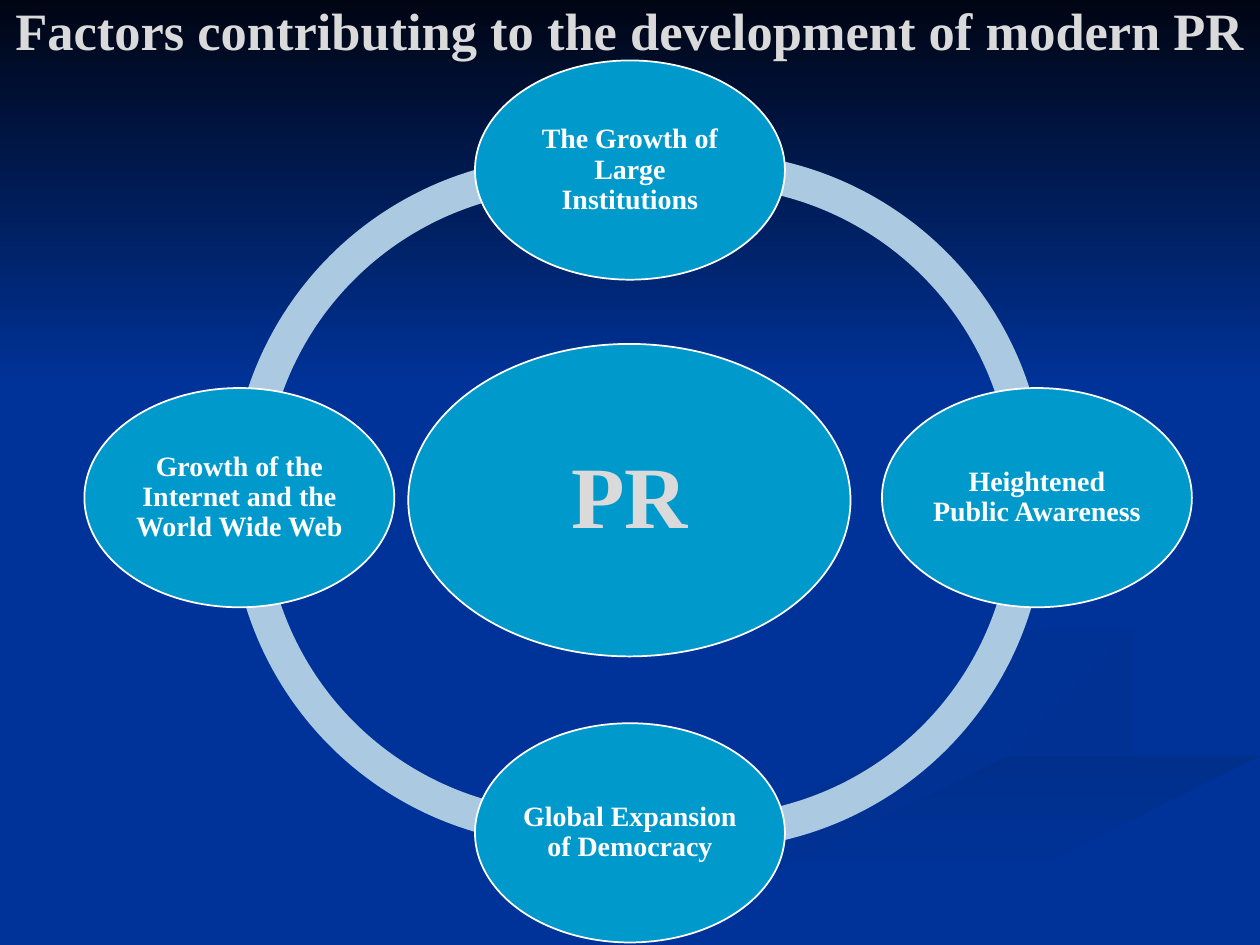
import pptx
import pptx.util
import pptx.dml.color
import pptx.enum.shapes
import pptx.enum.text

Inches = pptx.util.Inches
Pt = pptx.util.Pt
SHAPE = pptx.enum.shapes.MSO_SHAPE

FONT = "Times New Roman"
NAVY, BLUE, RING, WHITE, SILVER = "003399", "0099CC", "ABCAE2", "FFFFFF", "DADADA"

# Background swirls: first colour, last colour, clockwise angle, outline in inches
SWIRLS = [
    (NAVY, "003193", 0, [
        (7.81, 5.53), (6.82, 5.19), (5.75, 4.59), (6.02, 4.95), (7.41, 5.39),
        (7.86, 5.66), (7.39, 5.98), (4.99, 6.61), (3, 7.49), (3.61, 7.49),
        (5.64, 6.65), (7.56, 6.14), (8, 5.81)]),
    (NAVY, "003193", 45, [
        (9.43, 5.7), (9.05, 5.4), (7.58, 4.98), (7.24, 4.64), (7.55, 5.05),
        (8.8, 5.49), (9.18, 5.81), (8.94, 6.05), (9.32, 5.89)]),
    ("002F8C", NAVY, 90, [
        (5.03, 7.49), (5.71, 7.49), (6.95, 6.92), (8.21, 6.51), (9.98, 6.09),
        (9.98, 5.81), (7.64, 6.47), (6.3, 6.93)]),
    ("003091", NAVY, 45, [
        (7.81, 4.6), (8.26, 4.96), (8.05, 4.76), (8.59, 4.43), (9.98, 4.2),
        (9.98, 4.02), (8.35, 4.3)]),
]

# Ring quarters: left, top, start and end angle in degrees
RING_ARCS = [(1.83, 1.24, 180, 280), (1.83, 1.32, 80, 181),
             (2.91, 1.35, 358, 103), (2.91, 1.21, 257, 1)]

# Factors around the ring: left, top, label
FACTORS = [(3.77, 0.48, "The Growth of Large Institutions"),
           (7, 3.08, "Heightened Public Awareness"),
           (3.77, 5.74, "Global Expansion of Democracy"),
           (0.67, 3.08, "Growth of the Internet and the World Wide Web")]


def rgb(value):
    return pptx.dml.color.RGBColor.from_string(value)


def style(sp, color, line=None):
    sp.shadow.inherit = False
    sp.fill.solid()
    sp.fill.fore_color.rgb = rgb(color)
    if line:
        sp.line.color.rgb = rgb(line)
        sp.line.width = Pt(1)
    else:
        sp.line.fill.background()


def shade(sp, first, last, angle):
    style(sp, first)
    sp.fill.gradient()
    sp.fill.gradient_angle = -angle % 360  # python-pptx counts anticlockwise
    for stop, color, position in zip(sp.fill.gradient_stops, (first, last), (0, 1)):
        stop.color.rgb = rgb(color)
        stop.position = position


def write(sp, text, size, color=WHITE, inset_x=0.0, inset_y=0.0, spacing=1.0):
    tf = sp.text_frame
    tf.word_wrap = True
    tf.auto_size = pptx.enum.text.MSO_AUTO_SIZE.NONE
    tf.vertical_anchor = pptx.enum.text.MSO_ANCHOR.MIDDLE
    tf.margin_left = tf.margin_right = Inches(inset_x)
    tf.margin_top = tf.margin_bottom = Inches(inset_y)
    p = tf.paragraphs[0]
    p.alignment = pptx.enum.text.PP_ALIGN.CENTER
    p.line_spacing = spacing
    r = p.add_run()
    r.text = text
    r.font.name, r.font.size, r.font.bold = FONT, Pt(size), True
    r.font.color.rgb = rgb(color)


def add_backdrop(s, width, fade_height):
    s.background.fill.solid()
    s.background.fill.fore_color.rgb = rgb(NAVY)
    for first, last, angle, points in SWIRLS:
        builder = s.shapes.build_freeform(*points[0], scale=Inches(1))
        builder.add_line_segments(points[1:], close=True)
        shade(builder.convert_to_shape(), first, last, angle)
    # Dark fade over the upper part
    fade = s.shapes.add_shape(SHAPE.RECTANGLE, 0, 0, Inches(width), Inches(fade_height))
    shade(fade, "000514", NAVY, 90)


def add_title(s, x, y, w, h):
    title = s.shapes.title
    title.left, title.top, title.width, title.height = map(Inches, (x, y, w, h))
    write(title, "Factors contributing to the development of modern PR", 30,
          color=SILVER, inset_x=0.1)
    # Bring the title in front of the backdrop
    title.element.getparent().append(title.element)


def add_oval(s, x, y, w, h, text, size, **text_format):
    sp = s.shapes.add_shape(SHAPE.OVAL, *map(Inches, (x, y, w, h)))
    style(sp, BLUE, line=WHITE)
    write(sp, text, size, spacing=0.9, **text_format)


def add_cycle(s, x, y):
    """Ring, hub and factors; x and y shift the whole diagram."""
    for left, top, start, end in RING_ARCS:
        arc = s.shapes.add_shape(SHAPE.BLOCK_ARC, Inches(x + left), Inches(y + top),
                                 Inches(5.39), Inches(5.39))
        style(arc, RING)
        # One degree is 60000 units, an adjustment of 1 is 100000
        for i, value in enumerate((start * 0.6, end * 0.6, 0.05)):
            arc.adjustments[i] = value
    add_oval(s, x + 3.24, y + 2.73, 3.51, 2.48, "PR", 50,
             color=SILVER, inset_x=0.07, inset_y=0.07)
    for left, top, label in FACTORS:
        add_oval(s, x + left, y + top, 2.46, 1.74, label, 16, inset_x=0.02, inset_y=0.02)


def main():
    prs = pptx.Presentation()
    prs.slide_width, prs.slide_height = Inches(10), Inches(7.5)
    s = prs.slides.add_slide(prs.slide_layouts[5])
    add_backdrop(s, 10, 3.08)
    add_title(s, 0, 0, 10, 0.47)
    add_cycle(s, 0, 0)
    prs.save("out.pptx")


if __name__ == "__main__":
    main()
